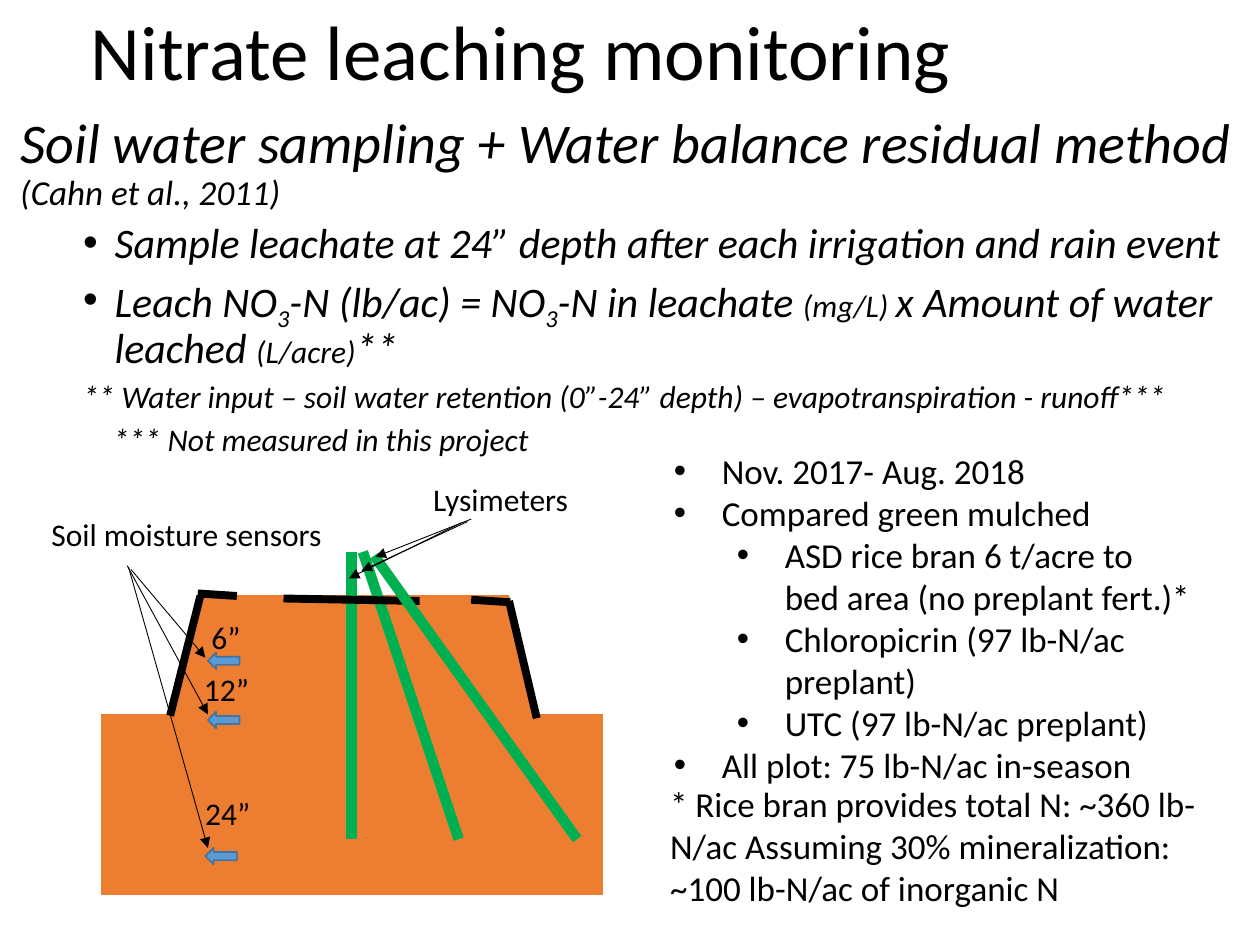
from lxml import etree
from pptx import Presentation
from pptx.dml.color import RGBColor
from pptx.enum.shapes import MSO_CONNECTOR, MSO_SHAPE
from pptx.enum.text import MSO_ANCHOR, MSO_AUTO_SIZE, PP_ALIGN
from pptx.oxml.ns import qn
from pptx.util import Pt

PX = 9144
STRAIGHT = MSO_CONNECTOR.STRAIGHT
RECTANGLE, TRAPEZOID, LEFT_ARROW = MSO_SHAPE.RECTANGLE, MSO_SHAPE.TRAPEZOID, MSO_SHAPE.LEFT_ARROW
LEFT, TOP, MIDDLE, NO_FIT = PP_ALIGN.LEFT, MSO_ANCHOR.TOP, MSO_ANCHOR.MIDDLE, MSO_AUTO_SIZE.NONE
BLACK, SOIL, TUBE, SENSOR, SENSOR_EDGE = "000000", "ED7D31", "00B050", "5B9BD5", "43739E"


def px(*lengths):
    return [length * PX for length in lengths]


def color(hex_value):
    return RGBColor.from_string(hex_value)


def set_bullet(paragraph, margin, hanging, bullet):
    properties = paragraph._p.get_or_add_pPr()
    properties.set("marL", str(margin * PX))
    properties.set("indent", str(-hanging * PX))
    if bullet:
        etree.SubElement(properties, qn("a:buFont")).set("typeface", "Arial")
        etree.SubElement(properties, qn("a:buChar")).set("char", "•")
    else:
        etree.SubElement(properties, qn("a:buNone"))


def write(frame, content, size=18, italic=False, margin=0, hanging=0, level=0,
          bullet=False, spacing=1.0, before=0, anchor=TOP, first=True):
    frame.word_wrap = True
    frame.auto_size = NO_FIT
    frame.vertical_anchor = anchor
    paragraph = frame.paragraphs[0] if first else frame.add_paragraph()
    paragraph.level = level
    set_bullet(paragraph, margin, hanging, bullet)
    paragraph.alignment = LEFT
    paragraph.line_spacing = spacing
    paragraph.space_before = Pt(before)
    paragraph.space_after = Pt(0)
    pieces = [(content, size, 0)] if isinstance(content, str) else content
    for words, points, baseline in pieces:
        run = paragraph.add_run()
        run.text = words
        run.font.name = "Calibri"
        run.font.size = Pt(points)
        run.font.italic = italic
        run.font.color.rgb = color(BLACK)
        if baseline:
            run._r.get_or_add_rPr().set("baseline", str(baseline * 1000))


def add_label(shapes, box, content, **form):
    label = shapes.add_textbox(*px(*box))
    write(label.text_frame, content, **form)
    return label.text_frame


def add_solid(shapes, preset, box, fill, edge):
    solid = shapes.add_shape(preset, *px(*box))
    solid.shadow.inherit = False
    solid.fill.solid()
    solid.fill.fore_color.rgb = color(fill)
    solid.line.color.rgb = color(edge)
    solid.line.width = Pt(1)
    return solid


def add_line(shapes, origin, ends, stroke, width, arrow=False):
    left, top = origin
    x1, y1, x2, y2 = ends
    line = shapes.add_connector(STRAIGHT, *px(left + x1, top + y1, left + x2, top + y2))
    line.line.color.rgb = color(stroke)
    line.line.width = Pt(width)
    if arrow:
        etree.SubElement(line.line._get_or_add_ln(), qn("a:tailEnd")).set("type", "triangle")
    etree.SubElement(line._element.spPr, qn("a:effectLst"))


def place(placeholder, box):
    placeholder.left, placeholder.top, placeholder.width, placeholder.height = px(*box)
    return placeholder.text_frame


def build_title(slide, box):
    write(place(slide.shapes.title, box), "Nitrate leaching monitoring",
          size=44, spacing=0.9, anchor=MIDDLE)


def build_method(slide, box):
    frame = place(slide.placeholders[1], box)
    common = dict(italic=True, spacing=0.9)
    write(frame, [("Soil water sampling + Water balance residual method ", 32, 0),
                  ("(Cahn et al., 2011)", 20, 0)], **common)
    equation = [("Leach NO", 24, 0), ("3", 24, -25), ("-N (lb/ac) = NO", 24, 0),
                ("3", 24, -25), ("-N in leachate ", 24, 0), ("(mg/L) ", 18, 0),
                ("x Amount of water leached ", 24, 0), ("(L/acre)", 18, 0), ("**", 24, 0)]
    common.update(level=1, before=5, first=False)
    for step in ("Sample leachate at 24” depth after each irrigation and rain event", equation):
        write(frame, step, size=24, margin=75, hanging=25, bullet=True, **common)
    write(frame, "** Water input – soil water retention (0”-24” depth) – "
          "evapotranspiration - runoff***", margin=50, **common)
    write(frame, "*** Not measured in this project", margin=74, **common)


def build_bed_profile(slide, box):
    left, top, width, height = box
    origin = left, top
    shapes = slide.shapes.add_group_shape().shapes
    add_label(shapes, (left, top + 28, 239, 40), "Soil moisture sensors")
    add_solid(shapes, RECTANGLE, (left + 50, top + 191, width - 50, height - 191), SOIL, SOIL)
    bed = add_solid(shapes, TRAPEZOID, (left + 105, top + 97, 291, 94), SOIL, SOIL)
    bed.adjustments[0] = 0.25

    for tube in ((257, 62, 333, 290), (248, 62, 248, 290)):
        add_line(shapes, origin, tube, TUBE, 6)
    add_label(shapes, (left + 303, top, 134, 40), "Lysimeters")
    for mulch in ((128, 97, 104, 192), (373, 101, 395, 194), (343, 100, 374, 102),
                  (126, 95, 157, 97), (194, 99, 302, 101)):
        add_line(shapes, origin, mulch, BLACK, 4.5)
    add_line(shapes, origin, (266, 65, 427, 290), TUBE, 6)
    for pointer in ((343, 36, 267, 66), (335, 39, 246, 83), (340, 38, 256, 77)):
        add_line(shapes, origin, pointer, BLACK, 0.5, arrow=True)

    depths = (("6”", (127, 110), (134, 142), (73, 76, 132, 146)),
              ("12”", (121, 151), (134, 189), (70, 73, 134, 191)),
              ("24”", (122, 249), (132, 297), (71, 74, 134, 297)))
    for depth, (label_x, label_y), (sensor_x, sensor_y), pointer in depths:
        add_solid(shapes, LEFT_ARROW, (left + sensor_x, top + sensor_y, 25, 13),
                  SENSOR, SENSOR_EDGE)
        add_line(shapes, origin, pointer, BLACK, 0.5, arrow=True)
        add_label(shapes, (left + label_x, top + label_y, 61, 40), depth)


def build_treatments(slide, box):
    left, top, width, height = box
    shapes = slide.shapes.add_group_shape().shapes
    add_label(shapes, (left, top + 264, width, height - 264),
              "* Rice bran provides total N: ~360 lb-N/ac Assuming 30% mineralization: "
              "~100 lb-N/ac of inorganic N", size=20)
    treatments = ((0, "Nov. 2017- Aug. 2018"),
                  (0, "Compared green mulched"),
                  (1, "ASD rice bran 6 t/acre to bed area (no preplant fert.)*"),
                  (1, "Chloropicrin (97 lb-N/ac preplant)"),
                  (1, "UTC (97 lb-N/ac preplant)"),
                  (0, "All plot: 75 lb-N/ac in-season"))
    frame = shapes.add_textbox(*px(left + 3, top, 432, 279)).text_frame
    for index, (level, treatment) in enumerate(treatments):
        write(frame, treatment, size=20, level=level, margin=38 + 50 * level,
              hanging=38, bullet=True, first=index == 0)


def main():
    deck = Presentation()
    deck.slide_width, deck.slide_height = px(1000, 750)
    slide = deck.slides.add_slide(deck.slide_layouts[1])
    build_method(slide, (6, 86, 988, 292))
    build_title(slide, (62, 3, 862, 82))
    build_bed_profile(slide, (31, 376, 447, 334))
    build_treatments(slide, (522, 352, 461, 375))
    deck.save("out.pptx")


if __name__ == "__main__":
    main()
